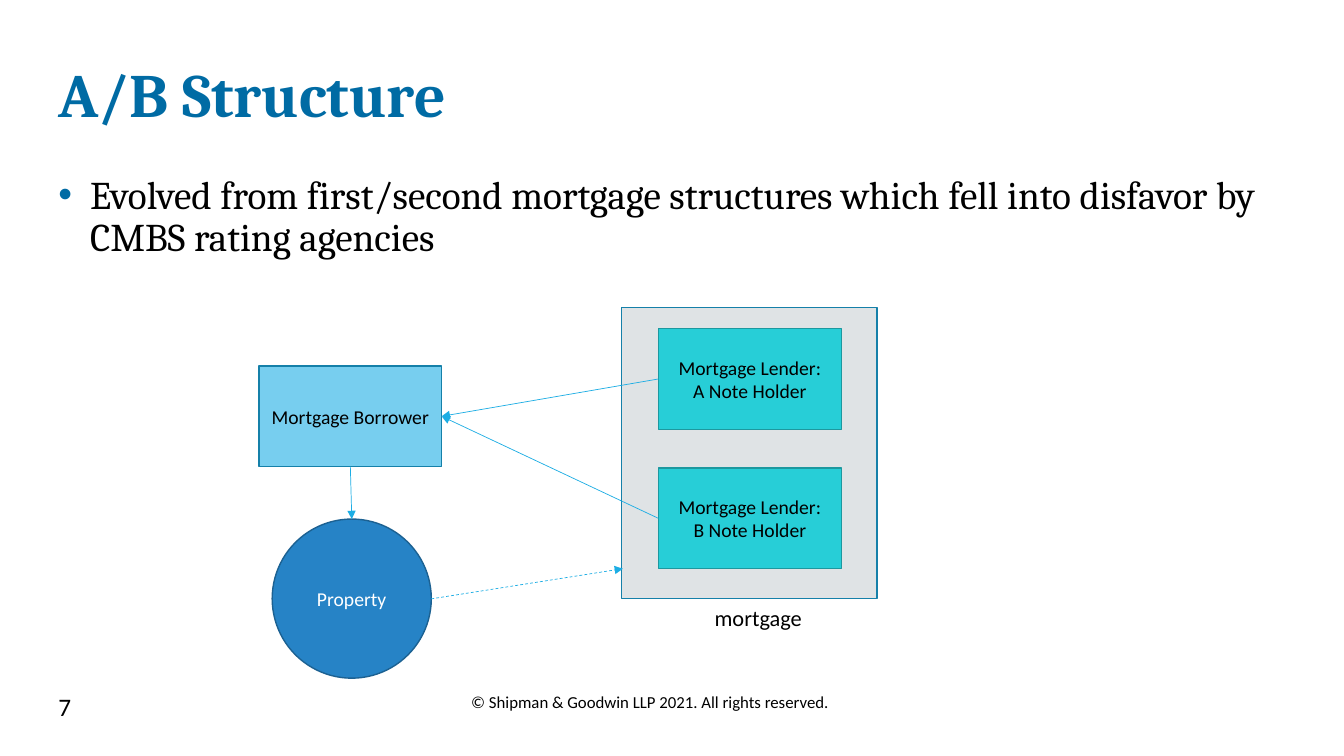
from dataclasses import dataclass

from lxml import etree
from pptx import Presentation
from pptx.dml.color import RGBColor
from pptx.enum.dml import MSO_LINE
from pptx.enum.shapes import MSO_CONNECTOR, MSO_SHAPE
from pptx.enum.text import MSO_ANCHOR, PP_ALIGN
from pptx.oxml.ns import qn
from pptx.util import Cm, Pt

RECT, OVAL = MSO_SHAPE.RECTANGLE, MSO_SHAPE.OVAL
STRAIGHT, DASH = MSO_CONNECTOR.STRAIGHT, MSO_LINE.DASH
TOP, MIDDLE = MSO_ANCHOR.TOP, MSO_ANCHOR.MIDDLE
LEFT, CENTER = PP_ALIGN.LEFT, PP_ALIGN.CENTER
# Connection sites, counted anticlockwise from the top
UP, WEST, DOWN, EAST = range(4)


@dataclass(frozen=True)
class Theme:
    head: str = "Cambria"
    body: str = "Calibri"
    title: int = 44
    lead: int = 28
    page: int = 18
    label: int = 16
    node: int = 14
    foot: int = 12
    black: str = "000000"
    white: str = "FFFFFF"
    brand: str = "006BA4"
    panel: str = "DFE3E5"
    sky: str = "77CEEF"
    edge: str = "1580A9"
    teal: str = "27CED7"
    rim: str = "1D989F"
    blue: str = "2683C6"
    navy: str = "1C6192"
    arrow: str = "1CADE4"


THEME = Theme()


def rgb(code):
    return RGBColor.from_string(code)


def add_dot(para):
    """Give a paragraph a coloured bullet and a hanging indent."""
    props = para._p.get_or_add_pPr()
    props.set("marL", str(Cm(0.8)))
    props.set("indent", str(-Cm(0.8)))
    tint = etree.SubElement(props, qn("a:buClr"))
    etree.SubElement(tint, qn("a:srgbClr"), val=THEME.brand)
    etree.SubElement(props, qn("a:buFont"), typeface="Arial")
    etree.SubElement(props, qn("a:buChar"), char="•")


def put_text(frame, text, size=THEME.node, font=THEME.body, color=THEME.black,
             bold=False, align=LEFT, anchor=TOP, space=1.0, dot=False):
    """Fill a text frame, one paragraph per line of text."""
    frame.word_wrap = True
    frame.vertical_anchor = anchor
    frame.text = text
    for para in frame.paragraphs:
        para.alignment = align
        para.line_spacing = space
        if dot:
            add_dot(para)
        for run in para.runs:
            run.font.name = font
            run.font.size = Pt(size)
            run.font.bold = bold
            run.font.color.rgb = rgb(color)


def add_label(slide, box, text, **form):
    area = slide.shapes.add_textbox(*map(Cm, box))
    put_text(area.text_frame, text, **form)


def add_node(slide, kind, box, fill, line, text="", color=THEME.black):
    node = slide.shapes.add_shape(kind, *map(Cm, box))
    node.shadow.inherit = False
    node.fill.solid()
    node.fill.fore_color.rgb = rgb(fill)
    node.line.color.rgb = rgb(line)
    node.line.width = Pt(1)
    if text:
        put_text(node.text_frame, text, color=color, align=CENTER,
                 anchor=MIDDLE)
    return node


def add_arrow(slide, start=(0, 0), end=(0, 0), dash=None):
    link = slide.shapes.add_connector(STRAIGHT, *map(Cm, start + end))
    link.line.color.rgb = rgb(THEME.arrow)
    link.line.width = Pt(0.5)
    if dash:
        link.line.dash_style = dash
    etree.SubElement(link.line._get_or_add_ln(), qn("a:tailEnd"),
                     type="triangle")
    etree.SubElement(link._element.spPr, qn("a:effectLst"))
    return link


def join(slide, first, out, last, into):
    """Glue an arrow to a site on each of two nodes."""
    link = add_arrow(slide)
    link.begin_connect(first, out)
    link.end_connect(last, into)


def main():
    deck = Presentation()
    deck.slide_width, deck.slide_height = Cm(33.87), Cm(19.05)
    slide = deck.slides.add_slide(deck.slide_layouts[6])

    # Panel behind the lenders
    add_node(slide, RECT, (15.67, 7.75, 6.43, 7.34), THEME.panel, THEME.edge)

    # Heading, lead and footer
    add_label(slide, (1.22, 0.51, 31.55, 3.91), "A/B Structure",
              size=THEME.title, font=THEME.head, color=THEME.brand,
              bold=True, anchor=MIDDLE, space=0.9)
    add_label(slide, (1.22, 4.29, 31.55, 12.4),
              "Evolved from first/second mortgage structures which fell "
              "into disfavor by CMBS rating agencies",
              size=THEME.lead, font=THEME.head, space=0.9, dot=True)
    add_label(slide, (10.67, 17.3, 11.43, 1.02),
              "© Shipman & Goodwin LLP 2021. All rights reserved.",
              size=THEME.foot, align=CENTER)
    add_label(slide, (1.22, 17.3, 7.62, 1.02), "7", size=THEME.page)

    # Borrower and property
    house = add_node(slide, OVAL, (6.86, 13.08, 4.01, 4.01), THEME.blue,
                     THEME.navy, "Property", THEME.white)
    debtor = add_node(slide, RECT, (6.53, 9.22, 4.6, 2.54), THEME.sky,
                      THEME.edge, "Mortgage Borrower")
    join(slide, debtor, DOWN, house, UP)

    # Lenders, each with an arrow to the borrower
    for row, note in enumerate("AB"):
        lender = add_node(slide, RECT, (16.59, 8.28 + 3.51 * row, 4.62, 2.54),
                          THEME.teal, THEME.rim,
                          f"Mortgage Lender:\n{note} Note Holder")
        join(slide, lender, WEST, debtor, EAST)

    # Mortgage on the property
    add_label(slide, (16.38, 15.09, 5.46, 0.94), "mortgage",
              size=THEME.label, align=CENTER)
    add_arrow(slide, (10.87, 15.09), (15.7, 14.33), dash=DASH)

    deck.save("out.pptx")


if __name__ == "__main__":
    main()
